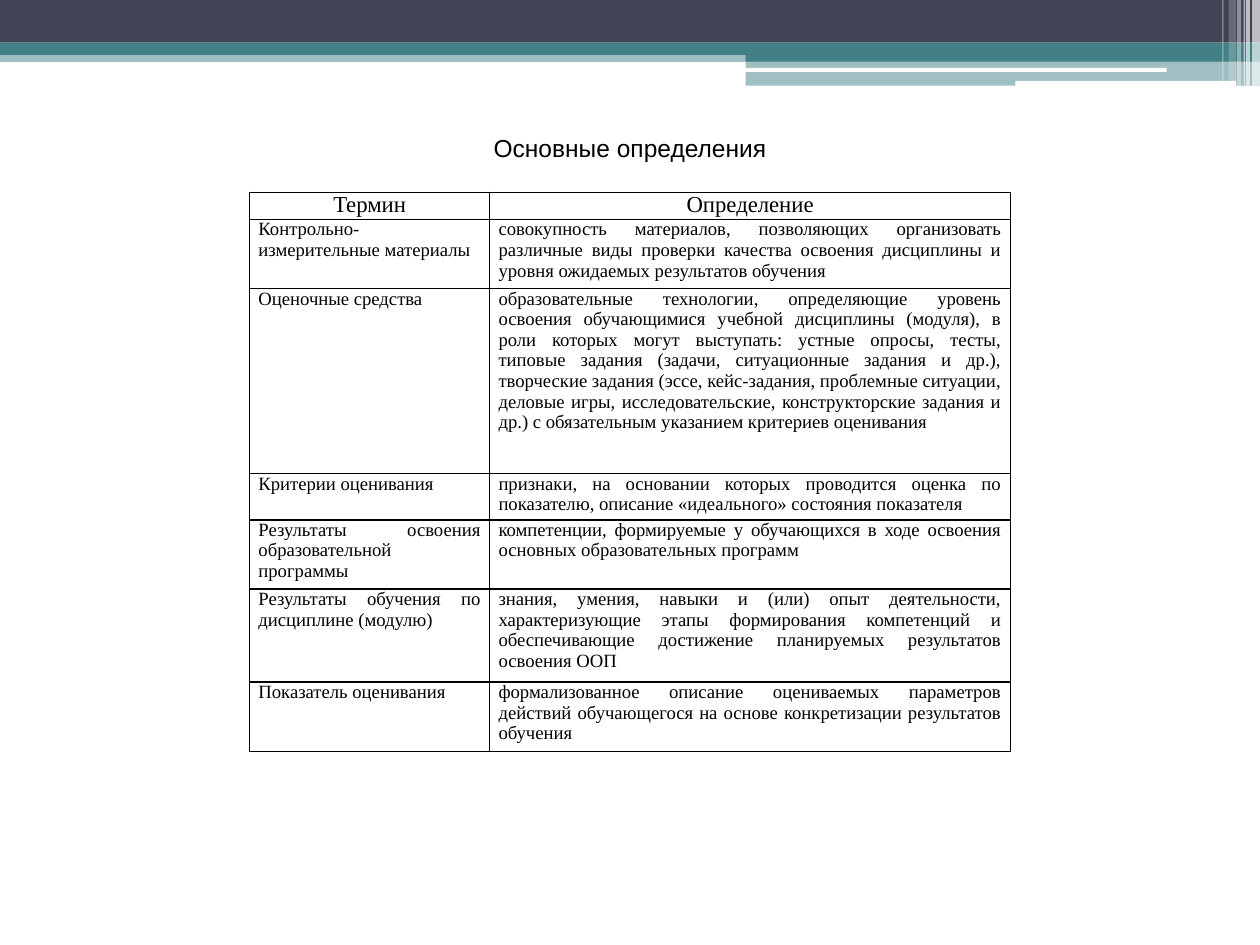
from lxml.etree import SubElement
from pptx import Presentation
from pptx.dml.color import RGBColor
from pptx.enum.shapes import MSO_SHAPE
from pptx.enum.text import MSO_ANCHOR, PP_ALIGN
from pptx.oxml.ns import qn
from pptx.util import Cm, Pt

BLACK = RGBColor(0x00, 0x00, 0x00)
WHITE = RGBColor(0xFF, 0xFF, 0xFF)
NAVY = RGBColor(0x42, 0x44, 0x56)
TEAL = RGBColor(0x43, 0x80, 0x86)

# left, top, width, height (cm), colour, opacity (%)
BANDS = [
    (0, 1.02, 25.4, 0.23, TEAL, 50),
    (0, 0, 25.4, 0.86, NAVY, 100),
    (0, 0.86, 25.4, 0.25, TEAL, 100),
    (15.03, 0.99, 10.37, 0.25, TEAL, 100),
    (15.03, 1.23, 10.37, 0.5, TEAL, 50),
]
WHITE_BARS = [(15.01, 1.37, 8.51, 0.08), (20.47, 1.63, 4.45, 0.1)]
# left, width, height (cm), opacity (%)
STRIPES = [
    (25.24, 0.16, 1.73, 65),
    (25.12, 0.08, 1.73, 65),
    (25.07, 0.03, 1.73, 60),
    (24.94, 0.08, 1.73, 40),
    (24.77, 0.15, 1.63, 20),
    (24.64, 0.03, 1.63, 30),
]

COLUMN_WIDTHS = [4.84, 10.5]
ROW_HEIGHTS = [0.54, 1.4, 3.73, 0.93, 1.4, 1.87, 1.4]
DEFINITIONS = [
    ("Термин", "Определение"),
    ("Контрольно-измерительные материалы",
     "совокупность материалов, позволяющих организовать различные виды проверки "
     "качества освоения дисциплины и уровня ожидаемых результатов обучения"),
    ("Оценочные средства",
     "образовательные технологии, определяющие уровень освоения обучающимися учебной "
     "дисциплины (модуля), в роли которых могут выступать: устные опросы, тесты, типовые "
     "задания (задачи, ситуационные задания и др.), творческие задания (эссе, "
     "кейс-задания, проблемные ситуации, деловые игры, исследовательские, "
     "конструкторские задания и др.) с обязательным указанием критериев оценивания"),
    ("Критерии оценивания",
     "признаки, на основании которых проводится оценка по показателю, описание "
     "«идеального» состояния показателя"),
    ("Результаты освоения образовательной программы",
     "компетенции, формируемые у обучающихся в ходе освоения основных "
     "образовательных программ"),
    ("Результаты обучения по дисциплине (модулю)",
     "знания, умения, навыки и (или) опыт деятельности, характеризующие этапы "
     "формирования компетенций и обеспечивающие достижение планируемых результатов "
     "освоения ООП"),
    ("Показатель оценивания",
     "формализованное описание оцениваемых параметров действий обучающегося на основе "
     "конкретизации результатов обучения"),
]


class SlideBuilder:
    def __init__(self, slide):
        self.slide = slide
        self.title_font = "Arial"
        self.table_font = "Times New Roman"

    def style(self, p, font, size, align):
        p.alignment = align
        p.font.name = font
        p.font.size = Pt(size)
        p.font.bold = False
        p.font.color.rgb = BLACK

    def bar(self, left, top, width, height, color, opacity=100, kind=MSO_SHAPE.RECTANGLE):
        sp = self.slide.shapes.add_shape(kind, Cm(left), Cm(top), Cm(width), Cm(height))
        sp.shadow.inherit = False
        sp.line.fill.background()
        sp.fill.solid()
        sp.fill.fore_color.rgb = color
        if opacity < 100:
            clr = sp.fill._xPr.find(qn("a:solidFill"))[0]
            SubElement(clr, qn("a:alpha"), val=str(opacity * 1000))
        return sp

    def title(self, text, left, top, width, height):
        sp = self.slide.shapes.title
        sp.left, sp.top, sp.width, sp.height = Cm(left), Cm(top), Cm(width), Cm(height)
        tf = sp.text_frame
        tf.text = text
        tf.vertical_anchor = MSO_ANCHOR.MIDDLE
        self.style(tf.paragraphs[0], self.title_font, 14, PP_ALIGN.CENTER)

    def border(self, cell):
        """Draw a thin black line on all four sides of the cell."""
        tc_pr = cell._tc.get_or_add_tcPr()
        for i, side in enumerate(("lnL", "lnR", "lnT", "lnB")):
            ln = tc_pr.makeelement(qn(f"a:{side}"), {"w": str(Pt(1))})
            fill = SubElement(ln, qn("a:solidFill"))
            SubElement(fill, qn("a:srgbClr"), val=str(BLACK))
            tc_pr.insert(i, ln)

    def table(self, rows, left, top, widths, heights):
        frame = self.slide.shapes.add_table(
            len(rows), len(widths), Cm(left), Cm(top), Cm(sum(widths)), Cm(sum(heights)))
        table = frame.table
        for column, width in zip(table.columns, widths):
            column.width = Cm(width)
        for i, (row, height) in enumerate(zip(table.rows, heights)):
            row.height = Cm(height)
            size, align = (13, PP_ALIGN.CENTER) if i == 0 else (10.7, PP_ALIGN.JUSTIFY)
            for cell, text in zip(row.cells, rows[i]):
                cell.text = text
                cell.margin_left = cell.margin_right = Cm(0.18)
                cell.margin_top = cell.margin_bottom = 0
                cell.fill.background()
                self.border(cell)
                self.style(cell.text_frame.paragraphs[0], self.table_font, size, align)


def main():
    prs = Presentation()
    prs.slide_width, prs.slide_height = Cm(25.4), Cm(19.05)
    s = SlideBuilder(prs.slides.add_slide(prs.slide_layouts[5]))

    for band in BANDS:
        s.bar(*band)
    for bar in WHITE_BARS:
        s.bar(*bar, WHITE, kind=MSO_SHAPE.ROUNDED_RECTANGLE)
    for left, width, height, opacity in STRIPES:
        s.bar(left, 0, width, height, WHITE, opacity)

    s.table(DEFINITIONS, 5.03, 3.88, COLUMN_WIDTHS, ROW_HEIGHTS)
    s.title("Основные определения", 0, 2.34, 25.4, 1.27)
    prs.save("out.pptx")


if __name__ == "__main__":
    main()
